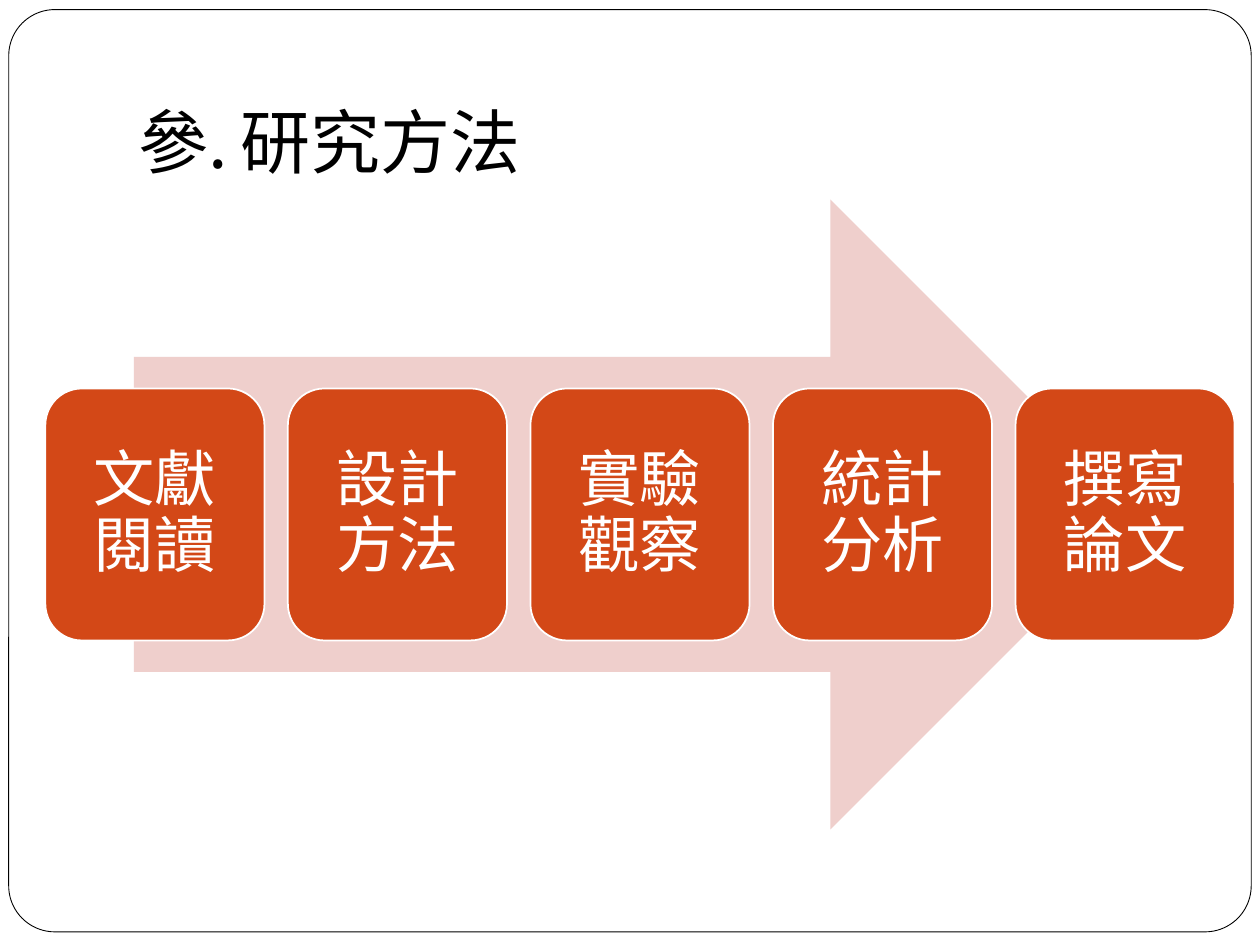
from lxml import etree
from pptx import Presentation
from pptx.dml.color import RGBColor
from pptx.enum.shapes import MSO_SHAPE
from pptx.enum.text import MSO_ANCHOR, PP_ALIGN
from pptx.oxml.ns import qn
from pptx.util import Pt

ROUNDED, ARROW = MSO_SHAPE.ROUNDED_RECTANGLE, MSO_SHAPE.RIGHT_ARROW
MIDDLE, BOTTOM = MSO_ANCHOR.MIDDLE, MSO_ANCHOR.BOTTOM
LEFT, CENTER = PP_ALIGN.LEFT, PP_ALIGN.CENTER

COLORS = {"paper": "FFFFFF", "ink": "000000", "arrow": "EFCFCC", "step": "D34817"}


def add_panel(kind, box, fill, line=None, line_width=0):
    panel = slide.shapes.add_shape(kind, *map(Pt, box))
    panel.shadow.inherit = False
    panel.fill.solid()
    panel.fill.fore_color.rgb = RGBColor.from_string(COLORS[fill])
    if line:
        panel.line.color.rgb = RGBColor.from_string(COLORS[line])
        panel.line.width = Pt(line_width)
    else:
        panel.line.fill.background()
    return panel


def write(shape, text, color, font_format, frame_format, paragraph_format):
    frame = shape.text_frame
    paragraph = frame.paragraphs[0]
    run = paragraph.add_run()
    run.text = text
    run.font.color.rgb = RGBColor.from_string(COLORS[color])
    for target, values in ((run.font, font_format), (frame, frame_format),
                           (paragraph, paragraph_format)):
        for name, value in values.items():
            setattr(target, name, value)
    return paragraph


prs = Presentation()
prs.slide_width, prs.slide_height = Pt(720), Pt(540)
slide = prs.slides.add_slide(prs.slide_layouts[6])

# Page frame
page_frame = add_panel(ROUNDED, (5, 5.5, 710, 527), "paper", "ink", 0.5)
page_frame.adjustments[0] = 0.05

# Title, numbered with a Chinese numeral
title = slide.shapes.add_textbox(Pt(72), Pt(21.6), Pt(612), Pt(90))
heading = write(
    title, "研究方法", "ink",
    {"name": "Cabin", "size": Pt(40)},
    {"word_wrap": True, "vertical_anchor": BOTTOM, "margin_bottom": Pt(7.2)},
    {"alignment": LEFT})
numbering = heading._p.get_or_add_pPr()
numbering.set("marL", str(Pt(58.5)))
numbering.set("indent", str(-Pt(58.5)))
etree.SubElement(numbering, qn("a:buAutoNum"), type="ea1ChtPeriod", startAt="3")

# Arrow behind the steps
add_panel(ARROW, (76.5, 114, 578, 360), "arrow")

# Research steps, evenly spaced along the arrow
STEPS = ["文獻閱讀", "設計方法", "實驗觀察", "統計分析", "撰寫論文"]
FIRST_LEFT, STEP_PITCH = 25.9, 138.6
STEP_FONT = {"name": "Arial", "size": Pt(35)}
STEP_FRAME = {"word_wrap": True, "vertical_anchor": MIDDLE}
STEP_FRAME.update({f"margin_{side}": Pt(17) for side in ("left", "right", "top", "bottom")})
STEP_PARAGRAPH = {"alignment": CENTER, "line_spacing": 0.9}
for index, step in enumerate(STEPS):
    step_box = (FIRST_LEFT + index * STEP_PITCH, 222, 125.2, 144)
    step_card = add_panel(ROUNDED, step_box, "step", "paper", 1)
    write(step_card, step, "paper", STEP_FONT, STEP_FRAME, STEP_PARAGRAPH)

prs.save("out.pptx")
